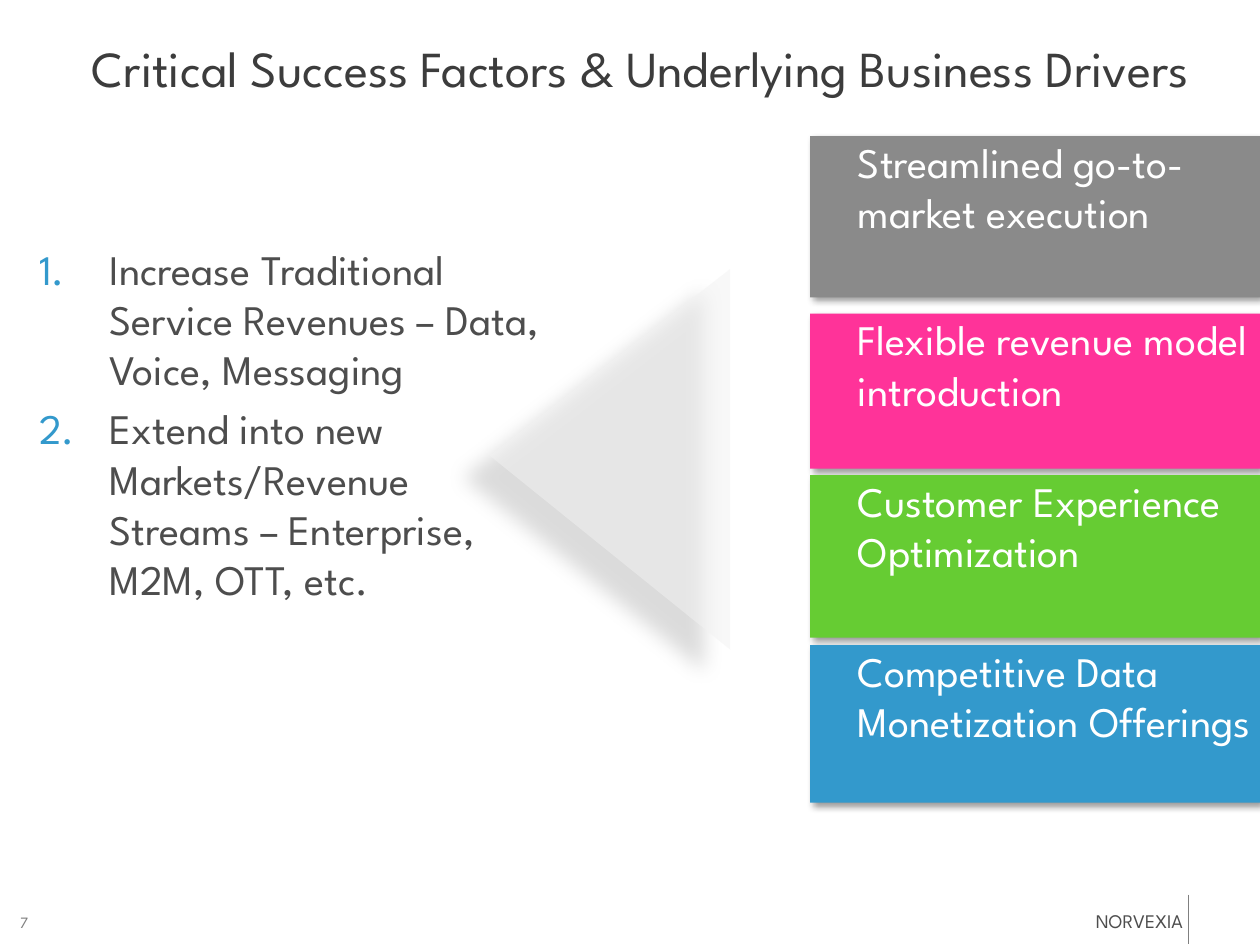
from dataclasses import dataclass

from lxml import etree
from pptx import Presentation
from pptx.dml.color import RGBColor
from pptx.enum.shapes import MSO_CONNECTOR, MSO_SHAPE
from pptx.enum.text import MSO_ANCHOR, MSO_AUTO_SIZE, PP_ALIGN
from pptx.oxml.ns import qn
from pptx.util import Inches, Pt

RECTANGLE, TRIANGLE = MSO_SHAPE.RECTANGLE, MSO_SHAPE.ISOSCELES_TRIANGLE
STRAIGHT = MSO_CONNECTOR.STRAIGHT
TOP, MIDDLE = MSO_ANCHOR.TOP, MSO_ANCHOR.MIDDLE
LEFT, RIGHT = PP_ALIGN.LEFT, PP_ALIGN.RIGHT
NO_AUTOFIT = MSO_AUTO_SIZE.NONE


@dataclass(frozen=True)
class Theme:
    font: str = "League Spartan"
    title_size: float = 28.8
    body_size: float = 24
    footer_size: float = 11
    number_size: float = 9
    title: str = "3C3C3C"
    body: str = "4D4D4D"
    muted: str = "808080"
    accent: str = "3399CC"
    on_fill: str = "FFFFFF"
    arrow: str = "F2F2F2"
    shadow: str = "000000"


THEME = Theme()
SLIDE_WIDTH, SLIDE_HEIGHT = 10, 7.5
DRIVER_LEFT = 6.43
FACTOR_INDENT = 0.56

FACTORS = [
    "Increase Traditional Service Revenues – Data, Voice, Messaging",
    "Extend into new Markets/Revenue Streams – Enterprise, M2M, OTT, etc.",
]

# Top, height, colour and wording of each driver
DRIVERS = [
    (1.08, 1.28, "8A8A8A", "Streamlined go-to-market execution"),
    (2.49, 1.23, "FF3399", "Flexible revenue model introduction"),
    (3.77, 1.29, "66CC33", "Customer Experience Optimization"),
    (5.12, 1.25, THEME.accent, "Competitive Data Monetization Offerings"),
]


def rgb(code):
    return RGBColor.from_string(code)


def inches(*lengths):
    return [Inches(length) for length in lengths]


def child(parent, tag, **attributes):
    return etree.SubElement(
        parent, qn(tag), {name: str(value) for name, value in attributes.items()})


def write(paragraph, text, size, color, align=LEFT):
    paragraph.alignment = align
    run = paragraph.add_run()
    run.text = text
    run.font.name = THEME.font
    run.font.size = Pt(size)
    run.font.color.rgb = rgb(color)


def set_indent(paragraph, margin, first_line=0):
    properties = paragraph._p.get_or_add_pPr()
    properties.set("marL", str(Inches(margin)))
    properties.set("indent", str(Inches(first_line)))
    return properties


def set_frame(frame, anchor=TOP, inset=0, wrap=True):
    frame.auto_size = NO_AUTOFIT
    frame.word_wrap = wrap
    frame.vertical_anchor = anchor
    frame.margin_left = frame.margin_right = Inches(inset)
    frame.margin_top = frame.margin_bottom = Inches(inset / 2)


def place(placeholder, left, top, width, height):
    placeholder.left, placeholder.top = inches(left, top)
    placeholder.width, placeholder.height = inches(width, height)


def add_block(slide, kind, box, color, opacity, blur, distance, angle):
    """Add a borderless filled shape that casts a shadow."""
    block = slide.shapes.add_shape(kind, *inches(*box))
    block.fill.solid()
    block.fill.fore_color.rgb = rgb(color)
    block.line.fill.background()
    block.shadow.inherit = False
    effects = block._element.spPr.find(qn("a:effectLst"))
    shadow = child(effects, "a:outerShdw", blurRad=Pt(blur), dist=Pt(distance),
                   dir=angle * 60000, algn="tl", rotWithShape=0)
    shade = child(shadow, "a:srgbClr", val=THEME.shadow)
    child(shade, "a:alpha", val=opacity * 1000)
    return block


def add_title(slide):
    title = slide.shapes.title
    place(title, 0, 0.07, SLIDE_WIDTH, 0.93)
    set_frame(title.text_frame, MIDDLE, inset=0.1)
    heading = title.text_frame.paragraphs[0]
    set_indent(heading, 0.63)
    write(heading, "Critical Success Factors & Underlying Business Drivers",
          THEME.title_size, THEME.title)


def add_arrow(slide):
    """Add the translucent triangle pointing from drivers to factors."""
    arrow = add_block(slide, TRIANGLE, (3.33, 2.69, 3.02, 1.91), THEME.arrow,
                      opacity=28, blur=11.8, distance=19.7, angle=141)
    arrow.adjustments[0] = 0.51
    arrow.rotation = 270
    fill_color = arrow._element.spPr.find(qn("a:solidFill"))[0]
    child(fill_color, "a:alpha", val=50000)


def add_factors(slide):
    factors = slide.placeholders[1]
    place(factors, 0.21, 1.88, 4.18, 3.28)
    frame = factors.text_frame
    set_frame(frame, inset=0.1)
    for index, text in enumerate(FACTORS):
        factor = frame.add_paragraph() if index else frame.paragraphs[0]
        properties = set_indent(factor, FACTOR_INDENT, -FACTOR_INDENT)
        child(child(properties, "a:buClr"), "a:srgbClr", val=THEME.accent)
        child(properties, "a:buFont", typeface=THEME.font)
        child(properties, "a:buAutoNum", type="arabicPeriod")
        factor.space_before = Pt(0.2 * THEME.body_size if index else 0)
        write(factor, text, THEME.body_size, THEME.body)


def add_driver(slide, top, height, color, text):
    box = (DRIVER_LEFT, top, SLIDE_WIDTH - DRIVER_LEFT, height)
    driver = add_block(slide, RECTANGLE, box, color,
                       opacity=40, blur=4, distance=3, angle=45)
    set_frame(driver.text_frame)
    label = driver.text_frame.paragraphs[0]
    set_indent(label, 0.38)
    write(label, text, THEME.body_size, THEME.on_fill)


def add_note(slide, box, text, size, color, align=LEFT, anchor=TOP, wrap=True):
    note = slide.shapes.add_textbox(*inches(*box))
    set_frame(note.text_frame, anchor, wrap=wrap)
    write(note.text_frame.paragraphs[0], text, size, color, align)


def add_footer(slide):
    add_note(slide, (8.55, 7.22, 0.84, 0.19), "NORVEXIA", THEME.footer_size,
             THEME.body, align=RIGHT, wrap=False)
    add_note(slide, (0.16, 7.24, 0.29, 0.15), "7", THEME.number_size,
             THEME.muted, anchor=MIDDLE)
    divider = slide.shapes.add_connector(STRAIGHT, *inches(9.43, 7.1, 9.43, 7.49))
    divider.line.color.rgb = rgb(THEME.muted)
    divider.line.width = Pt(0.25)
    child(divider._element.spPr, "a:effectLst")


def main():
    presentation = Presentation()
    presentation.slide_width, presentation.slide_height = inches(
        SLIDE_WIDTH, SLIDE_HEIGHT)
    slide = presentation.slides.add_slide(presentation.slide_layouts[1])

    add_footer(slide)
    add_title(slide)
    add_arrow(slide)
    add_factors(slide)
    for driver in DRIVERS:
        add_driver(slide, *driver)

    # The arrow lies behind the list
    body = slide.placeholders[1]._element
    body.getparent().append(body)
    presentation.save("out.pptx")


if __name__ == "__main__":
    main()
